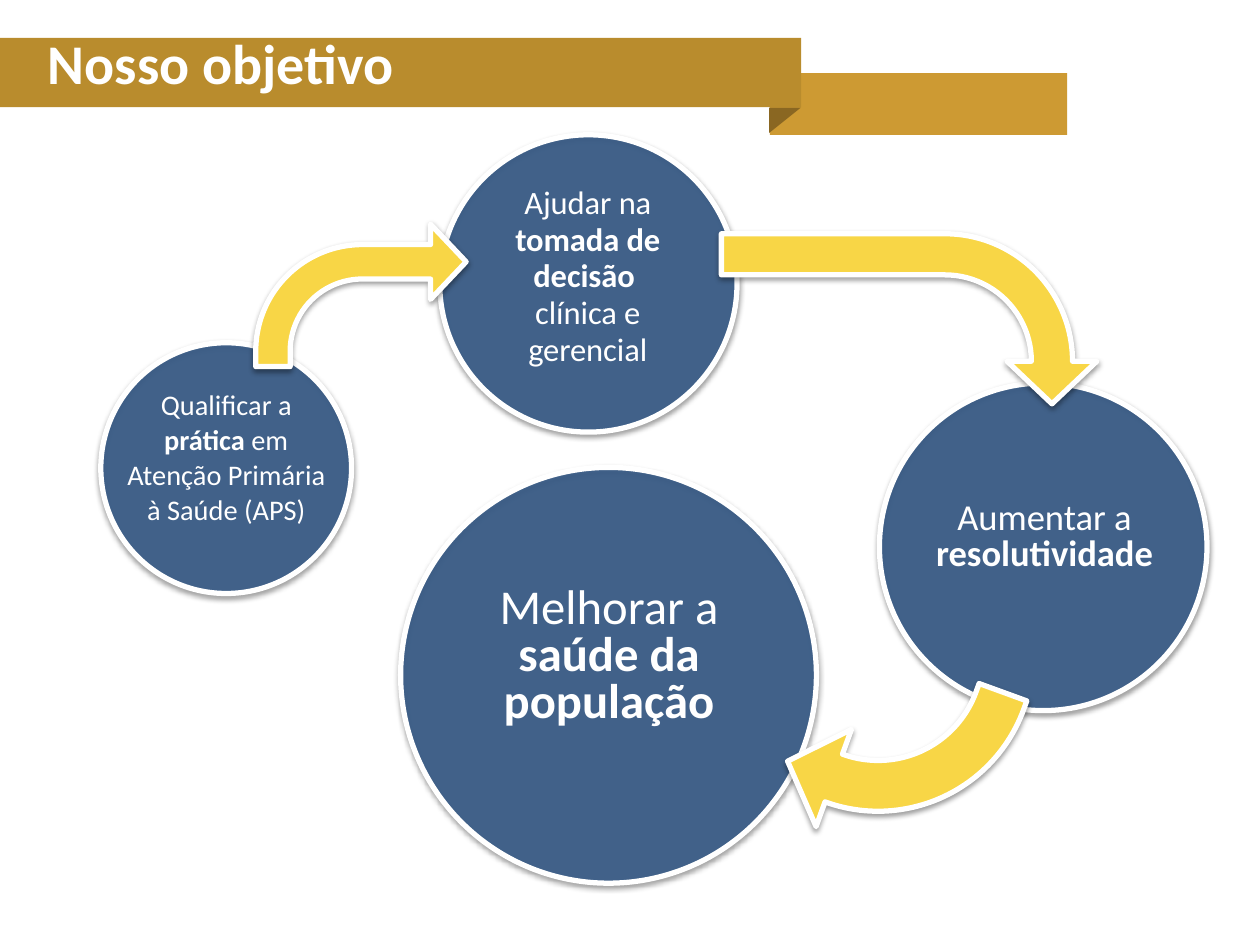
from dataclasses import dataclass
import pptx
import pptx.dml.color
import pptx.enum.shapes
import pptx.enum.text
import pptx.oxml
import pptx.oxml.ns
import pptx.util
from lxml import etree

Pt = pptx.util.Pt
RGB = pptx.dml.color.RGBColor.from_string
Kind = pptx.enum.shapes.MSO_SHAPE
Align = pptx.enum.text.PP_ALIGN
qn = pptx.oxml.ns.qn


@dataclass(frozen=True)
class Theme:
    font: str = "Calibri"
    white: str = "FFFFFF"
    blue: str = "1F497D"
    yellow: str = "F8D646"
    gold: str = "B98C2D"
    light: str = "CD9A33"
    dark: str = "8A6722"
    small: int = 28
    mid: int = 32
    large: int = 36
    huge: int = 48
    title: int = 32
    edge: int = 3


THEME = Theme()


@dataclass(frozen=True)
class Form:
    kind: object
    box: tuple
    fill: str
    alpha: int = 100
    turn: int = 0
    adjust: tuple = ()
    raised: bool = False


@dataclass(frozen=True)
class Label:
    box: tuple
    size: int
    lead: int
    paras: tuple  # each paragraph is a tuple of (text, bold) runs
    align: object = Align.CENTER
    drop: int = -25  # baseline shift in percent


def circle(left: float, top: float, size: float) -> Form:
    return Form(Kind.OVAL, (left, top, size, size), THEME.blue, 77, raised=True)


def arrow(box: tuple, turn: int = 0, adjust: tuple = (0.242, 0.264, 0.25, 0.75)) -> Form:
    return Form(Kind.BENT_ARROW, box, THEME.yellow, 100, turn, adjust, True)


def apply(item: object, values: dict) -> None:
    for name, value in values.items():
        setattr(item, name, value)


def shade(shape: object) -> None:
    """Soft shadow that falls straight down."""
    shape.shadow.inherit = False
    effects = shape._element.spPr.find(qn("a:effectLst"))
    outer = etree.SubElement(effects, qn("a:outerShdw"), blurRad=str(Pt(3.1)),
                             dist=str(Pt(1.6)), dir="5400000", rotWithShape="0")
    color = etree.SubElement(outer, qn("a:srgbClr"), val="000000")
    etree.SubElement(color, qn("a:alpha"), val="38000")


def draw(slide: object, form: Form) -> None:
    shape = slide.shapes.add_shape(form.kind, *map(Pt, form.box))
    shape.rotation = form.turn
    for index, value in enumerate(form.adjust):
        shape.adjustments[index] = value
    shape.fill.solid()
    shape.fill.fore_color.rgb = RGB(form.fill)
    if form.alpha < 100:
        color = shape._element.spPr.find(qn("a:solidFill"))[0]
        etree.SubElement(color, qn("a:alpha"), val=str(form.alpha * 1000))
    if form.raised:
        shape.line.color.rgb = RGB(THEME.white)
        shape.line.width = Pt(THEME.edge)
        shade(shape)
    else:
        shape.line.fill.background()
        shape.shadow.inherit = False


def write(slide: object, label: Label) -> None:
    frame = slide.shapes.add_textbox(*map(Pt, label.box)).text_frame
    apply(frame, {
        "word_wrap": True,
        "auto_size": pptx.enum.text.MSO_AUTO_SIZE.SHAPE_TO_FIT_TEXT,
        "vertical_anchor": pptx.enum.text.MSO_ANCHOR.MIDDLE,
    })
    for index, runs in enumerate(label.paras):
        para = frame.add_paragraph() if index else frame.paragraphs[0]
        apply(para, {"alignment": label.align, "line_spacing": Pt(label.lead)})
        for text, bold in runs:
            run = para.add_run()
            run.text = text
            apply(run.font, {"name": THEME.font, "size": Pt(label.size), "bold": bold})
            run.font.color.rgb = RGB(THEME.white)
            if label.drop:
                run._r.get_or_add_rPr().set("baseline", str(label.drop * 1000))


# Cycle: four circles that grow, joined by bent arrows
CYCLE = (
    circle(57.6, 195.84, 143.28),
    circle(251.28, 77.04, 169.92),
    circle(502.56, 218.88, 187.2),
    circle(228.96, 267.12, 237.6),
    arrow((146.16, 128.16, 120.24, 81.36)),
    arrow((470.88, 74.88, 97.2, 214.56), 90),
    arrow((455.04, 377.28, 116.64, 108.72), 200, (0.267, 0.272, 0.258, 0.849)),
)

# Title ribbon: tail, fold and front
RIBBON = (
    Form(Kind.RECTANGLE, (439.92, 41.76, 169.92, 35.28), THEME.light),
    Form(Kind.ISOSCELES_TRIANGLE, (441.36, 59.76, 14.4, 18), THEME.dark,
         turn=90, adjust=(0,)),
    Form(Kind.RECTANGLE, (0, 21.6, 457.92, 39.6), THEME.gold),
)

LABELS = (
    Label((61.2, 206.64, 136.08, 108), THEME.small, 20,
          ((("Qualificar a ", False), ("prática", True),
            (" em Atenção Primária à Saúde (APS)", False)),)),
    Label((266.4, 100.8, 138.96, 113.76), THEME.mid, 21,
          ((("Ajudar na ", False), ("tomada de decisão ", True)),
           (("clínica e gerencial", False),))),
    Label((516.96, 282.24, 159.84, 49.68), THEME.large, 21,
          ((("Aumentar a ", False), ("resolutividade", True)),)),
    Label((261.36, 330.48, 173.52, 90.72), THEME.huge, 27,
          ((("Melhorar a ", False), ("saúde da população", True)),)),
    Label((20.16, 33.84, 447.84, 24.48), THEME.title, 17,
          ((("Nosso objetivo", True),),), Align.LEFT, 0),
)


def main() -> None:
    deck = pptx.Presentation()
    apply(deck, {"slide_width": Pt(720), "slide_height": Pt(540)})
    slide = deck.slides.add_slide(deck.slide_layouts[6])
    for form in CYCLE + RIBBON:
        draw(slide, form)
    for label in LABELS:
        write(slide, label)
    deck.save("out.pptx")


if __name__ == "__main__":
    main()
